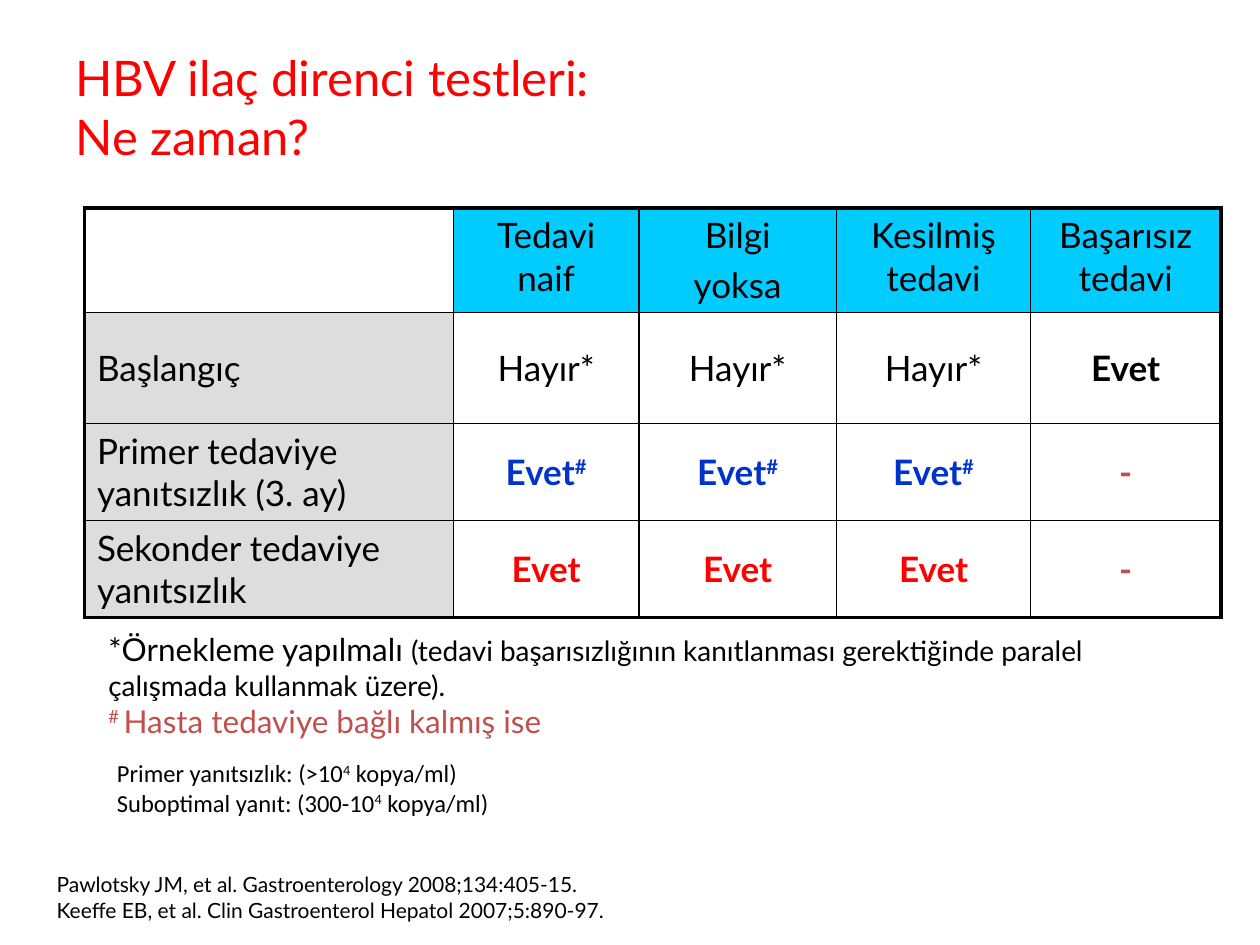
from lxml import etree
from pptx import Presentation
from pptx import util as u
from pptx.dml.color import RGBColor
from pptx.enum import text
from pptx.oxml.ns import qn

COLORS = {
    "black": "000000", "red": "FF0000", "blue": "0033CC",
    "brick": "C0504D", "header": "00CCFF", "label": "DDDDDD",
}
SLIDE_W, SLIDE_H = u.Inches(10), u.Inches(7.5)
TITLE_ONLY = 5
RAISED = {"raised": True}

COLUMN_SHARES = [29.3, 14.7, 15.7, 15.4, 15.1]
ROW_SHARES = [11.07, 11.73, 10.27, 10.27]
HEADERS = ["Tedavi naif", "Bilgi\nyoksa", "Kesilmiş tedavi", "Başarısız tedavi"]
LABELS = ["Başlangıç", "Primer tedaviye yanıtsızlık (3. ay)",
          "Sekonder tedaviye yanıtsızlık"]
NO = [("Hayır*", {})]
YES = [("Evet", {"bold": True})]
YES_IF_ADHERENT = [("Evet", {"bold": True, "color": "blue"}),
                   ("#", {"bold": True, "color": "blue", **RAISED})]
YES_SECONDARY = [("Evet", {"bold": True, "color": "red"})]
NOT_APPLICABLE = [("-", {"bold": True, "color": "brick"})]
ANSWERS = [
    [NO] * 3 + [YES],
    [YES_IF_ADHERENT] * 3 + [NOT_APPLICABLE],
    [YES_SECONDARY] * 3 + [NOT_APPLICABLE],
]


def across(percent):
    return round(SLIDE_W * percent / 100)


def down(percent):
    return round(SLIDE_H * percent / 100)


def place(left, top, width, height):
    """Turn percentages of the slide into a position and size."""
    return across(left), down(top), across(width), down(height)


def style_run(run, size, color="black", bold=False, font="Lato", raised=False):
    run.font.name = font
    run.font.size = u.Pt(size)
    run.font.bold = bold
    run.font.color.rgb = RGBColor.from_string(COLORS[color])
    if raised:
        run._r.get_or_add_rPr().set("baseline", "30000")


def write(frame, paragraphs, space_before=0, align=text.PP_ALIGN.LEFT, **base):
    """Fill a frame; each paragraph is a list of (words, style) pairs."""
    for number, pieces in enumerate(paragraphs):
        paragraph = frame.add_paragraph() if number else frame.paragraphs[0]
        paragraph.alignment = align
        paragraph.space_before = u.Pt(space_before)
        for words, style in pieces:
            run = paragraph.add_run()
            run.text = words
            style_run(run, **{**base, **style})


def add_title(slide, words):
    title = slide.shapes.title
    title.left, title.top, title.width, title.height = place(5, 4.4, 86.7, 13.73)
    frame = title.text_frame
    frame.text = words
    frame.auto_size = text.MSO_AUTO_SIZE.NONE
    frame.vertical_anchor = text.MSO_ANCHOR.TOP
    for paragraph in frame.paragraphs:
        paragraph.alignment = text.PP_ALIGN.LEFT
        style_run(paragraph.runs[0], 28, "red")


def add_note(slide, box, paragraphs, indent=0.19, inset=0, **base):
    frame = slide.shapes.add_textbox(*place(*box)).text_frame
    frame.word_wrap = True
    frame.margin_left = u.Inches(indent)
    frame.margin_right = frame.margin_top = frame.margin_bottom = u.Inches(inset)
    write(frame, paragraphs, **base)


def draw_borders(cell, widths):
    """Draw black borders; widths are points for left, right, top, bottom."""
    properties = cell._tc.get_or_add_tcPr()
    for position, (side, width) in enumerate(zip("LRTB", widths)):
        line = etree.Element(qn(f"a:ln{side}"), w=str(u.Pt(width)))
        fill = etree.SubElement(line, qn("a:solidFill"))
        etree.SubElement(fill, qn("a:srgbClr"), val=COLORS["black"])
        properties.insert(position, line)


def fill_cell(cell, paragraphs, fill=None, align=text.PP_ALIGN.CENTER,
              anchor=text.MSO_ANCHOR.MIDDLE):
    if fill:
        cell.fill.solid()
        cell.fill.fore_color.rgb = RGBColor.from_string(COLORS[fill])
    else:
        cell.fill.background()
    cell.vertical_anchor = anchor
    write(cell.text_frame, paragraphs, space_before=4, align=align, size=20)


def add_test_table(slide):
    rows, columns = len(ROW_SHARES), len(COLUMN_SHARES)
    box = place(6.7, 22, sum(COLUMN_SHARES), sum(ROW_SHARES))
    table = slide.shapes.add_table(rows, columns, *box).table
    table.first_row = table.horz_banding = False
    for column, share in zip(table.columns, COLUMN_SHARES):
        column.width = across(share)
    for row, share in zip(table.rows, ROW_SHARES):
        row.height = down(share)

    fill_cell(table.cell(0, 0), [])
    for c, header in enumerate(HEADERS, 1):
        lines = [[(line, {})] for line in header.split("\n")]
        fill_cell(table.cell(0, c), lines, "header", anchor=text.MSO_ANCHOR.TOP)
    for r, (label, answers) in enumerate(zip(LABELS, ANSWERS), 1):
        fill_cell(table.cell(r, 0), [[(label, {})]], "label", text.PP_ALIGN.LEFT)
        for c, answer in enumerate(answers, 1):
            fill_cell(table.cell(r, c), [answer])

    for r in range(rows):
        for c in range(columns):
            on_edge = [c == 0, c == columns - 1, r == 0, r == rows - 1]
            draw_borders(table.cell(r, c), [2.25 if edge else 1 for edge in on_edge])


def main():
    deck = Presentation()
    deck.slide_width, deck.slide_height = SLIDE_W, SLIDE_H
    slide = deck.slides.add_slide(deck.slide_layouts[TITLE_ONLY])

    add_title(slide, "HBV ilaç direnci testleri:\nNe zaman?")
    add_test_table(slide)
    add_note(slide, (6.7, 66.7, 82.7, 11.7), [
        [("*Örnekleme yapılmalı ", {}),
         ("(tedavi başarısızlığının kanıtlanması gerektiğinde paralel "
          "çalışmada kullanmak üzere).", {"size": 16})],
        [("# ", {"color": "brick", **RAISED}),
         ("Hasta tedaviye bağlı kalmış ise", {"color": "brick"})],
    ], size=18)
    add_note(slide, (2.6, 92.27, 46.6, 5.33), [
        [("Pawlotsky JM, et al. Gastroenterology 2008;134:405-15.", {})],
        [("Keeffe EB, et al. Clin Gastroenterol Hepatol 2007;5:890-97.", {})],
    ], size=12)
    add_note(slide, (8.3, 79.6, 50, 7.6), [
        [(threshold, {}), ("4", RAISED), (" kopya/ml)", {})]
        for threshold in ("Primer yanıtsızlık: (>10", "Suboptimal yanıt: (300-10")
    ], indent=0.1, inset=0.05, size=14, font="Calibri")

    deck.save("out.pptx")


if __name__ == "__main__":
    main()
